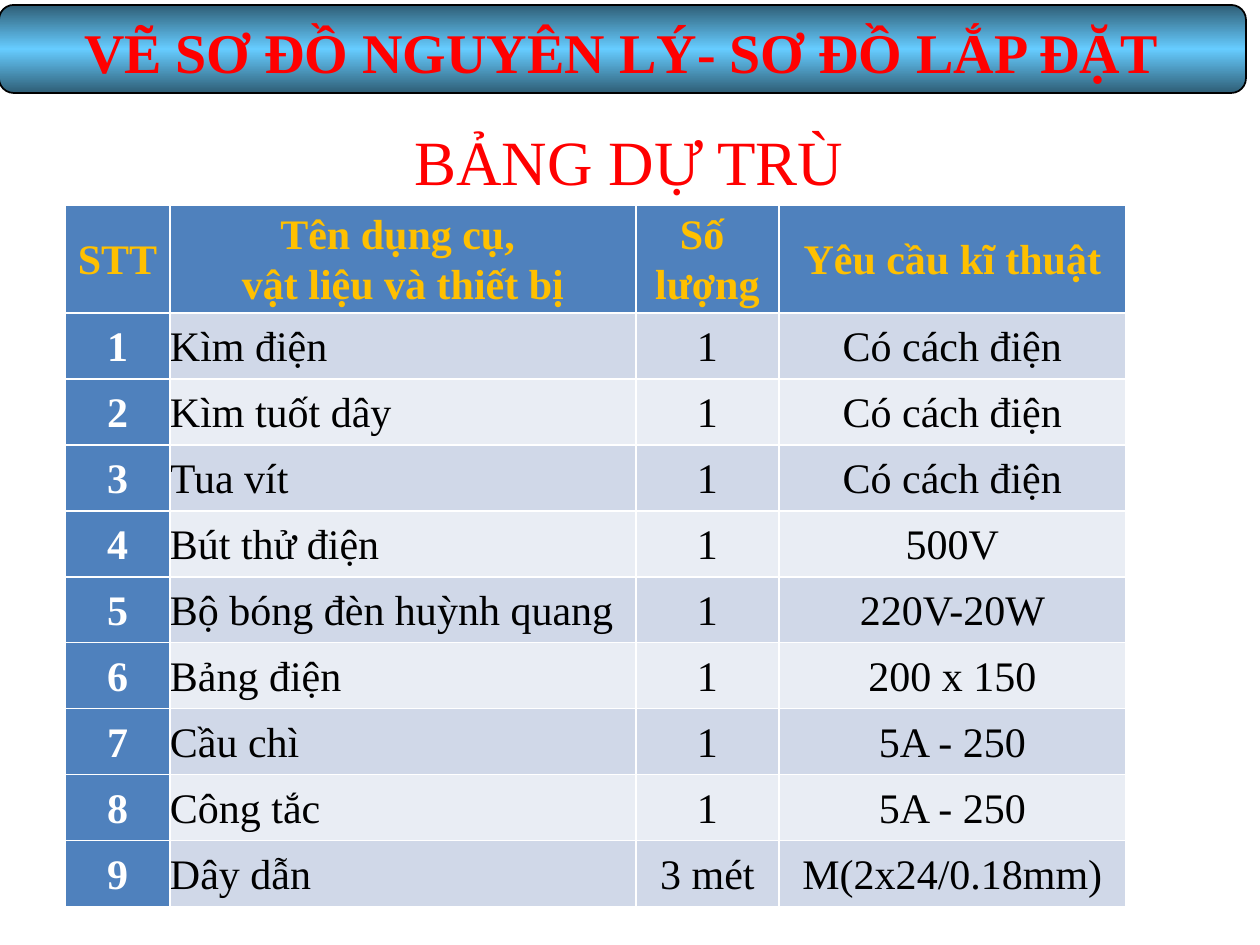
from copy import deepcopy

from pptx import Presentation
from pptx.dml.color import RGBColor as Rgb
from pptx.enum.shapes import MSO_SHAPE as Shape
from pptx.enum.text import MSO_ANCHOR as Anchor, PP_ALIGN as Align
from pptx.oxml.ns import qn
from pptx.util import Pt

PX = 914400 // 126
FONT = "Times New Roman"
COLORS = {
    "red": "FF0000", "gold": "FFC000", "white": "FFFFFF", "black": "000000",
    "edge": "2F5E76", "sky": "66CCFF",
    "blue": "4F81BD", "odd": "D0D8E8", "even": "E9EDF4",
}
HEAD = ["STT", "Tên dụng cụ, \nvật liệu và thiết bị", "Số \nlượng", "Yêu cầu kĩ thuật"]
ITEMS = [
    ("Kìm điện", "1", "Có cách điện"),
    ("Kìm tuốt dây", "1", "Có cách điện"),
    ("Tua vít", "1", "Có cách điện"),
    ("Bút thử điện", "1", "500V"),
    ("Bộ bóng đèn huỳnh quang", "1", "220V-20W"),
    ("Bảng điện", "1", "200 x 150"),
    ("Cầu chì", "1", "5A - 250"),
    ("Công tắc", "1", "5A - 250"),
    ("Dây dẫn", "3 mét", "M(2x24/0.18mm)"),
]
COLS = [105, 466, 143, 347]
HEAD_H, ROW_H = 107, 66


def px(*vals):
    return [val * PX for val in vals]


def color(name):
    return Rgb.from_string(COLORS[name])


def write(frame, text, size=24, ink="black", bold=False, align=Align.CENTER,
          line=None, after=None):
    frame.text = text
    for para in frame.paragraphs:
        para.alignment = align
        para.line_spacing = line
        para.space_after = after
        font = para.runs[0].font
        font.name, font.size, font.bold = FONT, Pt(size), bold
        font.color.rgb = color(ink)


def inset(box, left, top, right, bottom):
    box.margin_left, box.margin_top, box.margin_right, box.margin_bottom = px(
        left, top, right, bottom)


def add_bar(slide):
    """Draw the banner, dark at both edges, behind the title."""
    bar = slide.shapes.add_shape(Shape.ROUNDED_RECTANGLE, *px(-1, 5, 1247, 88))
    bar.shadow.inherit = False
    bar.fill.gradient()
    bar.fill.gradient_angle = 90
    stops = bar.fill.gradient_stops
    for stop, name, pos in zip(stops, ("edge", "sky"), (0, 0.5)):
        stop.color.rgb = color(name)
        stop.position = pos
    ramp = next(bar.element.iter(qn("a:gsLst")))
    last = deepcopy(ramp[0])
    last.set("pos", "100000")
    ramp.append(last)
    bar.line.color.rgb = color("black")
    bar.line.width = Pt(1)
    slide.shapes.title.element.addprevious(bar.element)


def add_title(slide, text):
    title = slide.shapes.title
    title.left, title.top, title.width, title.height = px(30, 4, 1230, 81)
    frame = title.text_frame
    frame.word_wrap = True
    frame.vertical_anchor = Anchor.TOP
    inset(frame, 54, 13, 13, 0)
    write(frame, text, size=32, ink="red", bold=True, align=Align.LEFT)


def add_label(slide, text):
    frame = slide.shapes.add_textbox(*px(402, 116, 486, 89)).text_frame
    frame.word_wrap = True
    write(frame, text, size=36, ink="red", align=Align.LEFT)


def fill_cell(cell, text, back, **form):
    cell.fill.solid()
    cell.fill.fore_color.rgb = color(back)
    cell.vertical_anchor = Anchor.MIDDLE
    inset(cell, 0, 0, 0, 0)
    write(cell.text_frame, text, line=1.07, **form)


def add_grid(slide):
    high = HEAD_H + ROW_H * len(ITEMS)
    table = slide.shapes.add_table(
        len(ITEMS) + 1, len(COLS), *px(65, 205, sum(COLS), high)).table
    table.first_col = True
    for col, wide in zip(table.columns, COLS):
        col.width = wide * PX
    for num, row in enumerate(table.rows):
        row.height = (ROW_H if num else HEAD_H) * PX
    for cell, text in zip(table.rows[0].cells, HEAD):
        fill_cell(cell, text, "blue", ink="gold", bold=True)
    for num, item in enumerate(ITEMS, 1):
        first, *rest = table.rows[num].cells
        fill_cell(first, str(num), "blue", ink="white", bold=True, after=Pt(12))
        back = "odd" if num % 2 else "even"
        for cell, text, align in zip(rest, item, (Align.JUSTIFY, Align.CENTER, Align.CENTER)):
            fill_cell(cell, text, back, align=align, after=Pt(12))


def main():
    deck = Presentation()
    deck.slide_width, deck.slide_height = px(1260, 945)
    slide = deck.slides.add_slide(deck.slide_layouts[5])
    add_bar(slide)
    add_title(slide, "VẼ SƠ ĐỒ NGUYÊN LÝ- SƠ ĐỒ LẮP ĐẶT")
    add_label(slide, "BẢNG DỰ TRÙ")
    add_grid(slide)
    deck.save("out.pptx")


if __name__ == "__main__":
    main()
